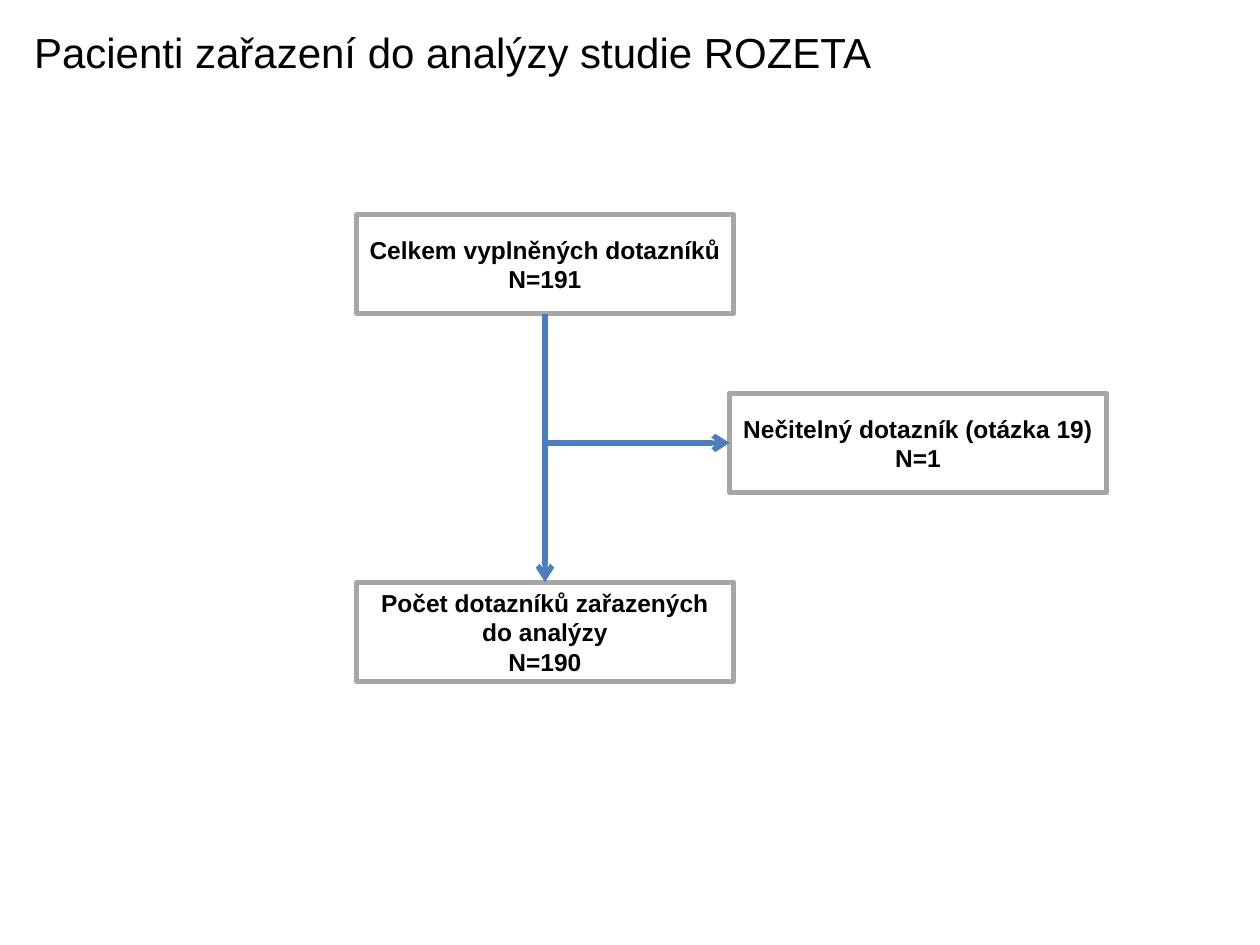
from dataclasses import dataclass

from lxml.etree import SubElement
from pptx import Presentation
from pptx.dml.color import RGBColor
from pptx.enum.shapes import MSO_CONNECTOR, MSO_SHAPE
from pptx.enum.text import MSO_ANCHOR, PP_ALIGN
from pptx.oxml.ns import qn
from pptx.util import Inches, Pt


@dataclass(frozen=True)
class Theme:
    font: str = "Arial"
    text: RGBColor = RGBColor(0x00, 0x00, 0x00)
    border: RGBColor = RGBColor(0xA6, 0xA6, 0xA6)
    arrow: RGBColor = RGBColor(0x4B, 0x7E, 0xBC)
    title_size: int = 24
    box_size: int = 14
    line_width: int = 3


THEME = Theme()
BOX_W, BOX_H = 2.99, 0.79
TOP, BOTTOM, RIGHT, LEFT = 0, 2, 3, 1


def write(tf, *lines, size, bold=False, align=PP_ALIGN.LEFT, anchor=MSO_ANCHOR.TOP):
    """Fill a text frame with one paragraph per line."""
    tf.word_wrap = True
    tf.vertical_anchor = anchor
    for i, line in enumerate(lines):
        p = tf.paragraphs[0] if i == 0 else tf.add_paragraph()
        p.alignment = align
        p.space_before = Pt(0)
        r = p.add_run()
        r.text = line
        r.font.name = THEME.font
        r.font.size = Pt(size)
        r.font.bold = bold
        r.font.color.rgb = THEME.text


def add_title(slide, text):
    sp = slide.shapes.title
    sp.left, sp.top = Inches(0.17), Inches(0.16)
    sp.width, sp.height = Inches(9.14), Inches(0.55)
    write(sp.text_frame, text, size=THEME.title_size)


def add_box(slide, left, top, *lines):
    sp = slide.shapes.add_shape(MSO_SHAPE.RECTANGLE, Inches(left), Inches(top),
                                Inches(BOX_W), Inches(BOX_H))
    sp.shadow.inherit = False
    sp.fill.background()
    sp.line.color.rgb = THEME.border
    sp.line.width = Pt(THEME.line_width)
    write(sp.text_frame, *lines, size=THEME.box_size, bold=True,
          align=PP_ALIGN.CENTER, anchor=MSO_ANCHOR.MIDDLE)
    return sp


def add_arrow(slide, kind, start, start_side, end, end_side):
    """Join two boxes with an arrow."""
    cxn = slide.shapes.add_connector(kind, 0, 0, 0, 0)
    cxn.begin_connect(start, start_side)
    cxn.end_connect(end, end_side)
    cxn.line.color.rgb = THEME.arrow
    cxn.line.width = Pt(THEME.line_width)
    SubElement(cxn.line._get_or_add_ln(), qn("a:tailEnd"), type="arrow")
    SubElement(cxn._element.spPr, qn("a:effectLst"))
    return cxn


def bend_once(cxn):
    """Make an elbow run down first, then right, with a single corner."""
    x, y, w, h = cxn.left, cxn.top, cxn.width, cxn.height
    spPr = cxn._element.spPr
    spPr.find(qn("a:prstGeom")).set("prst", "bentConnector2")
    xfrm = spPr.find(qn("a:xfrm"))
    xfrm.set("rot", str(270 * 60000))
    xfrm.set("flipH", "1")
    # The frame is turned about its centre, so its sides swap
    cxn.left, cxn.top = x + (w - h) // 2, y + (h - w) // 2
    cxn.width, cxn.height = h, w


def main():
    prs = Presentation()
    prs.slide_width, prs.slide_height = Inches(10), Inches(7.5)
    slide = prs.slides.add_slide(prs.slide_layouts[5])

    add_title(slide, "Pacienti zařazení do analýzy studie ROZETA")

    # Patient flow boxes
    total = add_box(slide, 2.83, 1.7, "Celkem vyplněných dotazníků", "N=191")
    analysed = add_box(slide, 2.83, 4.62,
                       "Počet dotazníků zařazených do analýzy", "N=190")
    excluded = add_box(slide, 5.79, 3.12, "Nečitelný dotazník (otázka 19)", "N=1")

    # Arrows
    add_arrow(slide, MSO_CONNECTOR.STRAIGHT, total, BOTTOM, analysed, TOP)
    bend_once(add_arrow(slide, MSO_CONNECTOR.ELBOW, total, BOTTOM, excluded, LEFT))

    prs.save("out.pptx")


if __name__ == "__main__":
    main()
